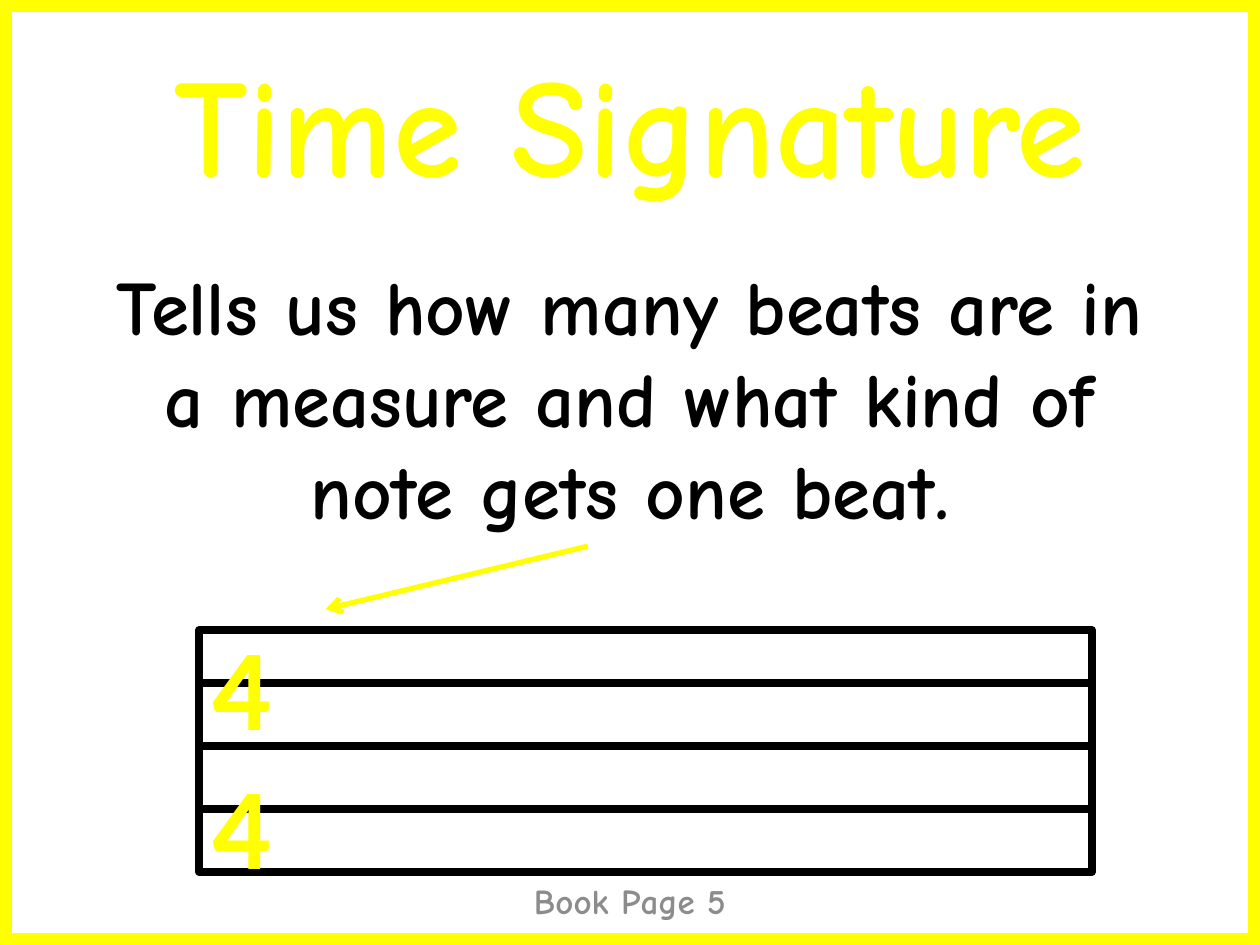
from pptx import Presentation
from pptx.dml.color import RGBColor
from pptx.enum.shapes import MSO_CONNECTOR, MSO_SHAPE
from pptx.enum.text import MSO_ANCHOR, MSO_AUTO_SIZE, PP_ALIGN
from pptx.util import Cm, Pt
from lxml.etree import SubElement
from pptx.oxml.ns import qn

YELLOW, BLACK, GREY = "FFFF00", "000000", "8C8C8C"
COMIC, PLAIN = "Comic Neue", "Calibri"


def paint(fmt, color):
    """Set a solid colour on a font or a line."""
    fill = fmt.fill
    fill.solid()
    fill.fore_color.rgb = RGBColor.from_string(color)


def cms(*nums):
    return [Cm(n) for n in nums]


def write(shape, lines, size, color, face=COMIC, anchor=MSO_ANCHOR.TOP, gap=None):
    """Fill a shape with centred bold lines; gap is the letter spacing in points."""
    frame = shape.text_frame
    form = {"word_wrap": True, "auto_size": MSO_AUTO_SIZE.NONE,
            "vertical_anchor": anchor}
    for name, value in form.items():
        setattr(frame, name, value)
    frame.text = "\n".join(lines)
    for para in frame.paragraphs:
        para.alignment = PP_ALIGN.CENTER
        for run in para.runs:
            for name, value in {"size": Pt(size), "name": face, "bold": True}.items():
                setattr(run.font, name, value)
            paint(run.font, color)
            if gap:
                run.font._element.set("spc", str(int(gap * 100)))


def label(slide, box, lines, size, color, **form):
    write(slide.shapes.add_textbox(*cms(*box)), lines, size, color, **form)


def outline(slide, box, color, width):
    rect = slide.shapes.add_shape(MSO_SHAPE.RECTANGLE, *cms(*box))
    rect.shadow.inherit = False
    rect.fill.background()
    paint(rect.line, color)
    rect.line.width = Pt(width)


def rule(slide, ends, color, width, head=False):
    line = slide.shapes.add_connector(MSO_CONNECTOR.STRAIGHT, *cms(*ends))
    paint(line.line, color)
    line.line.width = Pt(width)
    props = line._element.spPr
    if head:
        SubElement(props.find(qn("a:ln")), qn("a:tailEnd"), type="arrow")
    SubElement(props, qn("a:effectLst"))


def heading(slide, box, text):
    title = slide.shapes.title
    for name, value in zip(("left", "top", "width", "height"), cms(*box)):
        setattr(title, name, value)
    write(title, [text], 80, YELLOW, anchor=MSO_ANCHOR.MIDDLE)


def staff(slide, box):
    """Draw the staff with its time signature and the arrow pointing at it."""
    left, top, wide, high = box
    step = 1.27
    outline(slide, box, BLACK, 4.5)
    for n in (3, 2, 1):
        y = top + high - n * step
        rule(slide, (left, y, left + wide, y), BLACK, 4.5)
    label(slide, (left - 0.21, top - 0.42, 2.12, 5.9), ["4", "4"], 66, YELLOW,
          face=PLAIN, gap=1.5)
    rule(slide, (left + 7.83, top - 1.69, left + 2.54, top - 0.42), YELLOW, 3,
         head=True)


def main():
    deck = Presentation()
    deck.slide_width, deck.slide_height = cms(25.4, 19.05)
    slide = deck.slides.add_slide(deck.slide_layouts[5])
    heading(slide, (0.64, 0.85, 24.13, 3.18), "Time Signature")
    outline(slide, (0, 0, 25.4, 19.05), YELLOW, 14)
    label(slide, (8.68, 17.65, 8.04, 1.02), ["Book Page 5"], 20, GREY,
          anchor=MSO_ANCHOR.MIDDLE)
    label(slide, (1.9, 5.08, 21.6, 5.9),
          ["Tells us how many beats are in a measure and what kind of "
           "note gets one beat."], 44, BLACK)
    staff(slide, (4.02, 12.7, 17.99, 4.88))
    deck.save("out.pptx")


if __name__ == "__main__":
    main()
